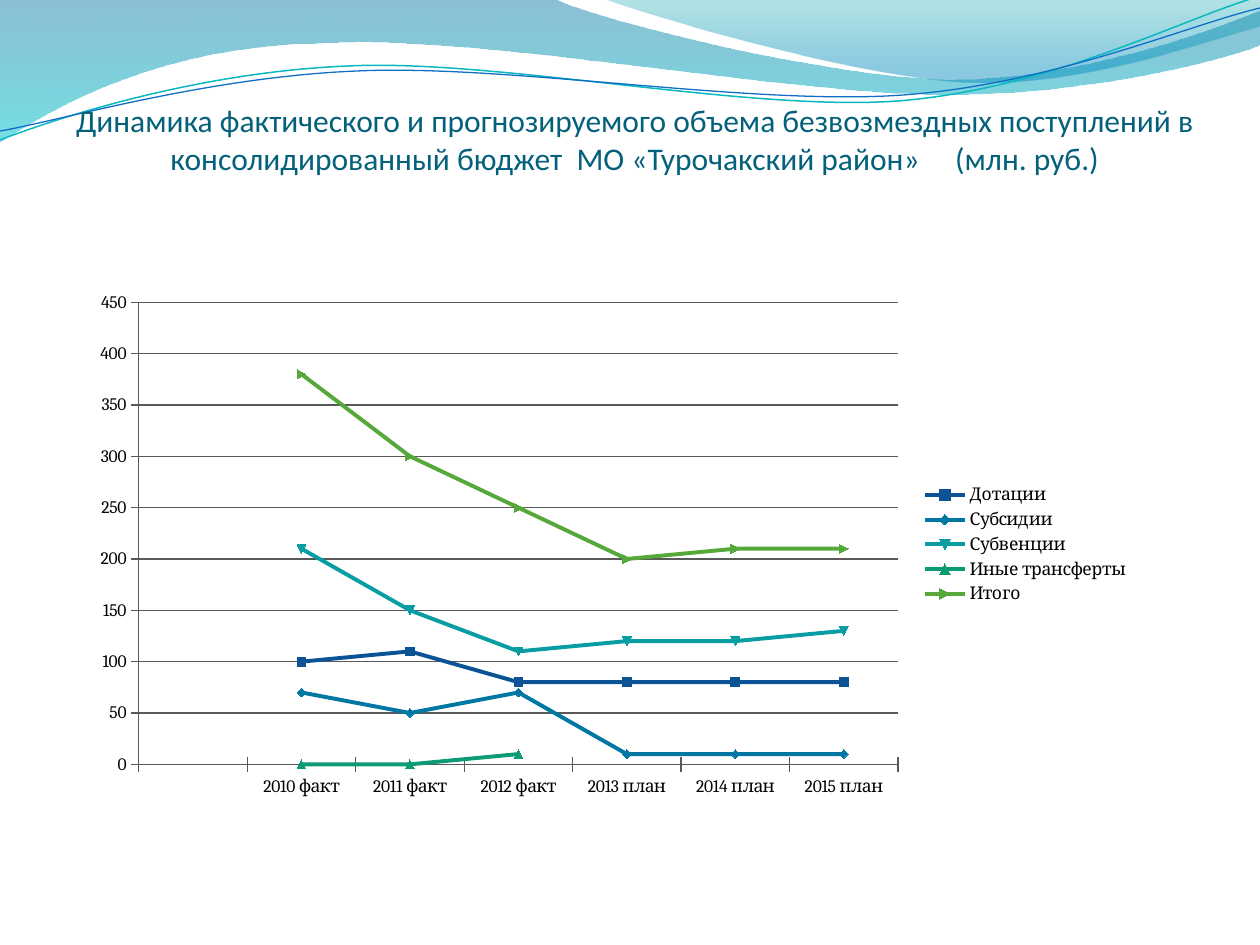
from dataclasses import dataclass
from math import cos, radians, sin

from lxml import etree
from pptx import Presentation
from pptx.chart.data import CategoryChartData
from pptx.dml.color import RGBColor
from pptx.enum.chart import XL_CHART_TYPE, XL_LEGEND_POSITION, XL_TICK_MARK
from pptx.enum.text import MSO_ANCHOR, MSO_AUTO_SIZE, PP_ALIGN
from pptx.oxml.ns import qn
from pptx.util import Pt

PX = 914400 / 126
SLIDE_WIDTH, SLIDE_HEIGHT = 1260, 945
TITLE_ONLY_LAYOUT = 5
RIBBON_TILT = -2.7
RIBBON_CENTER = (629, 72)
SERIES_SHADE = -0.25
LINE_MARKERS = XL_CHART_TYPE.LINE_MARKERS
LEGEND_RIGHT = XL_LEGEND_POSITION.RIGHT
TICK_CROSS = XL_TICK_MARK.CROSS

BLACK = RGBColor(0x00, 0x00, 0x00)
AXIS_GREY = RGBColor(0x59, 0x59, 0x59)
TITLE_TEAL = RGBColor(0x04, 0x61, 0x7B)
DEEP_BLUE = RGBColor(0x00, 0x74, 0xA1)
AQUA = RGBColor(0x00, 0xC6, 0xCF)
SEA_GREEN = RGBColor(0x00, 0xA1, 0xA9)
SKY_BLUE = RGBColor(0x00, 0x8B, 0xBF)
RIBBON_AQUA = RGBColor(0x0A, 0xB8, 0xBF)
BLUE = RGBColor(0x0F, 0x6F, 0xC6)
LIGHT_BLUE = RGBColor(0x00, 0x9D, 0xD9)
TURQUOISE = RGBColor(0x0B, 0xD0, 0xD9)
MINT = RGBColor(0x10, 0xCF, 0x9B)
LEAF_GREEN = RGBColor(0x7C, 0xCA, 0x62)

Point = tuple[float, float]


@dataclass(frozen=True)
class Outline:
    """A start point, then segments: one point for a line, three for a Bézier curve."""
    start: Point
    segments: tuple[tuple[Point, ...], ...]


@dataclass(frozen=True)
class GradientStop:
    position: float
    color: RGBColor
    opacity: int


@dataclass(frozen=True)
class Wave:
    outline: Outline
    stops: tuple[GradientStop, GradientStop]


@dataclass(frozen=True)
class Ribbon:
    outline: Outline
    color: RGBColor
    width: float


@dataclass(frozen=True)
class Revenue:
    name: str
    values: tuple
    color: RGBColor


WAVES = (
    Wave(Outline((0, 0), (
        ((554, -1),),
        ((600, 21), (837, 79), (955, 79)),
        ((1074, 79), (1207, 33), (1260, 11)),
        ((1261, 45),),
        ((1238, 55), (1096, 96), (940, 94)),
        ((784, 94), (481, 35), (324, 43)),
        ((163, 45), (58, 105), (-1, 142)),
    )), (GradientStop(0, DEEP_BLUE, 45), GradientStop(1, AQUA, 55))),
    Wave(Outline((604, -1), (
        ((641, 14), (859, 78), (969, 82)),
        ((1079, 87), (1211, 40), (1260, 26)),
        ((1260, 0),),
    )), (GradientStop(0, SEA_GREEN, 30), GradientStop(0.8, SKY_BLUE, 45))),
)
RIBBONS = (
    Ribbon(Outline((0, 140), (
        ((60, 117), (199, 72), (349, 66)),
        ((498, 59), (747, 112), (898, 101)),
        ((1050, 89), (1182, 19), (1257, -3)),
    )), RIBBON_AQUA, 0.85),
    Ribbon(Outline((0, 131), (
        ((59, 121), (207, 77), (357, 71)),
        ((508, 64), (752, 106), (903, 95)),
        ((1053, 84), (1185, 26), (1260, 8)),
    )), BLUE, 0.75),
)
TITLE = ("Динамика фактического и прогнозируемого объема безвозмездных поступлений в "
         "консолидированный бюджет  МО «Турочакский район»     (млн. руб.)")
YEARS = ("", "2010 факт", "2011 факт", "2012 факт", "2013 план", "2014 план", "2015 план")
REVENUES = (
    Revenue("Дотации", (None, 100, 110, 80, 80, 80, 80), BLUE),
    Revenue("Субсидии", (None, 70, 50, 70, 10, 10, 10), LIGHT_BLUE),
    Revenue("Субвенции", (None, 210, 150, 110, 120, 120, 130), TURQUOISE),
    Revenue("Иные трансферты", (None, 0, 0, 10, None, None, None), MINT),
    Revenue("Итого", (None, 380, 300, 250, 200, 210, 210), LEAF_GREEN),
)


def emu(px: float) -> int:
    return round(px * PX)


def untilt(point: Point) -> Point:
    """Undo the ribbon tilt, which the shape's own rotation then restores."""
    angle = radians(-RIBBON_TILT)
    center_x, center_y = RIBBON_CENTER
    x, y = point[0] - center_x, point[1] - center_y
    return (center_x + x * cos(angle) - y * sin(angle),
            center_y + x * sin(angle) + y * cos(angle))


def untilt_outline(outline: Outline) -> Outline:
    return Outline(untilt(outline.start),
                   tuple(tuple(map(untilt, segment)) for segment in outline.segments))


def draw_outline(slide, outline: Outline, close: bool):
    """Draw the outline with true curves and place it on the slide master."""
    builder = slide.shapes.build_freeform(*map(emu, outline.start))
    builder.add_line_segments([tuple(map(emu, segment[-1])) for segment in outline.segments],
                              close=close)
    shape = builder.convert_to_shape()
    shape.shadow.inherit = False
    for line, segment in zip(list(shape.element.iter(qn("a:lnTo"))), outline.segments):
        if len(segment) == 3:
            curve = etree.Element(qn("a:cubicBezTo"))
            for x, y in segment:
                point = etree.SubElement(curve, qn("a:pt"))
                point.set("x", str(emu(x) - shape.left))
                point.set("y", str(emu(y) - shape.top))
            line.getparent().replace(line, curve)
    master_shapes = slide.slide_layout.slide_master.shapes
    next_id = max(other.shape_id for other in master_shapes) + 1
    shape.element.nvSpPr.cNvPr.set("id", str(next_id))
    master_shapes._spTree.append(shape.element)
    return shape


def draw_wave(slide, wave: Wave) -> None:
    shape = draw_outline(slide, wave.outline, close=True)
    shape.line.fill.background()
    shape.fill.gradient()
    shape.fill.gradient_angle = 270
    for stop, wanted in zip(shape.fill.gradient_stops, wave.stops):
        stop.position = wanted.position
        stop.color.rgb = wanted.color
    colors = shape.element.spPr.iter(qn("a:srgbClr"))
    for color, wanted in zip(colors, wave.stops):
        etree.SubElement(color, qn("a:alpha")).set("val", str(wanted.opacity * 1000))


def draw_ribbon(slide, ribbon: Ribbon) -> None:
    shape = draw_outline(slide, untilt_outline(ribbon.outline), close=False)
    shape.rotation = RIBBON_TILT
    shape.fill.background()
    shape.line.color.rgb = ribbon.color
    shape.line.width = Pt(ribbon.width)


def place_title(slide) -> None:
    title = slide.shapes.title
    title.left, title.top, title.width, title.height = map(emu, (63, 59, 1144, 118))
    frame = title.text_frame
    frame.text = TITLE
    frame.word_wrap = True
    frame.auto_size = MSO_AUTO_SIZE.NONE
    frame.vertical_anchor = MSO_ANCHOR.BOTTOM
    frame.margin_left = frame.margin_right = frame.margin_bottom = 0
    frame.margin_top = emu(6)
    paragraph = frame.paragraphs[0]
    paragraph.alignment = PP_ALIGN.CENTER
    font = paragraph.runs[0].font
    font.name, font.size, font.color.rgb = "Calibri", Pt(18), TITLE_TEAL


def draw_chart(slide) -> None:
    data = CategoryChartData()
    data.categories = YEARS
    for revenue in REVENUES:
        data.add_series(revenue.name, revenue.values)
    chart = slide.shapes.add_chart(LINE_MARKERS, *map(emu, (79, 282, 1063, 525)), data).chart
    chart.has_title = False
    chart.font.name, chart.font.size, chart.font.color.rgb = "Cambria", Pt(10), BLACK
    chart.has_legend = True
    chart.legend.position = LEGEND_RIGHT
    chart.legend.include_in_layout = False
    chart.plots[0].vary_by_categories = False
    value_axis = chart.value_axis
    value_axis.minimum_scale, value_axis.maximum_scale, value_axis.major_unit = 0, 450, 50
    value_axis.has_major_gridlines = True
    for axis in (chart.category_axis, value_axis):
        axis.major_tick_mark = TICK_CROSS
    for line in (chart.category_axis.format.line, value_axis.format.line,
                 value_axis.major_gridlines.format.line):
        line.color.rgb, line.width = AXIS_GREY, Pt(0.75)
    for series, revenue in zip(chart.plots[0].series, REVENUES):
        series.smooth = False
        line = series.format.line
        line.color.rgb, line.width = revenue.color, Pt(2.25)
        line.color.brightness = SERIES_SHADE


def main() -> None:
    presentation = Presentation()
    presentation.slide_width, presentation.slide_height = emu(SLIDE_WIDTH), emu(SLIDE_HEIGHT)
    slide = presentation.slides.add_slide(presentation.slide_layouts[TITLE_ONLY_LAYOUT])
    for wave in WAVES:
        draw_wave(slide, wave)
    for ribbon in RIBBONS:
        draw_ribbon(slide, ribbon)
    place_title(slide)
    draw_chart(slide)
    presentation.save("out.pptx")


if __name__ == "__main__":
    main()
